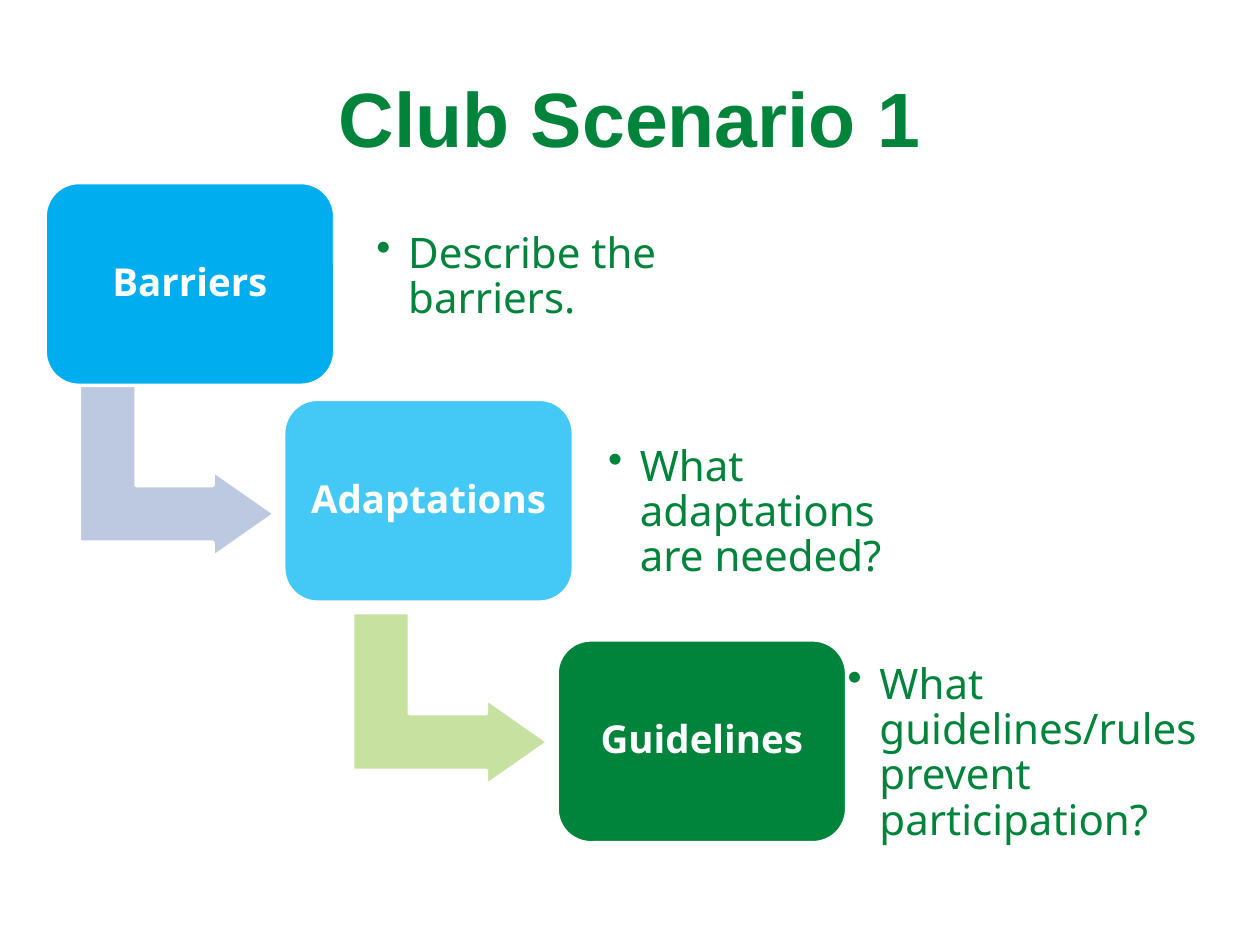
import pptx
import pptx.util
import pptx.dml.color
import pptx.enum.shapes
import pptx.enum.text
import pptx.oxml.ns
import lxml.etree

Cm = pptx.util.Cm
Pt = pptx.util.Pt
KIND = pptx.enum.shapes.MSO_SHAPE
ALIGN = pptx.enum.text.PP_ALIGN
MID = pptx.enum.text.MSO_ANCHOR.MIDDLE

HUES = {
    "white": "FFFFFF",
    "green": "00833B",
    "blue": "00AEEF",
    "sky": "44C8F5",
    "mist": "BDC9E1",
    "lime": "C7E1A1",
}


def tint(name):
    return pptx.dml.color.RGBColor.from_string(HUES[name])


class Deck:
    body = "Noto Sans"
    head = "Arial"

    def __init__(self, wide, high):
        self.show = pptx.Presentation()
        self.show.slide_width = Cm(wide)
        self.show.slide_height = Cm(high)
        self.slide = self.show.slides.add_slide(self.show.slide_layouts[5])

    def words(self, para, text, size, hue, face, bold=False):
        run = para.add_run()
        run.text = text
        run.font.size = Pt(size)
        run.font.name = face
        run.font.bold = bold
        run.font.color.rgb = tint(hue)

    def frame(self, shape, inset):
        frame = shape.text_frame
        frame.word_wrap = True
        frame.vertical_anchor = MID
        frame.margin_left = frame.margin_right = Cm(inset)
        frame.margin_top = frame.margin_bottom = Cm(inset)
        return frame.paragraphs[0]

    def title(self, text, left, top, wide, high):
        shape = self.slide.shapes.title
        shape.left, shape.top = Cm(left), Cm(top)
        shape.width, shape.height = Cm(wide), Cm(high)
        shape.text_frame.vertical_anchor = MID
        para = shape.text_frame.paragraphs[0]
        para.alignment = ALIGN.CENTER
        self.words(para, text, 44, "green", self.head, True)

    def block(self, kind, hue, left, top, wide, high):
        shape = self.slide.shapes.add_shape(
            kind, Cm(left), Cm(top), Cm(wide), Cm(high))
        shape.shadow.inherit = False
        shape.fill.solid()
        shape.fill.fore_color.rgb = tint(hue)
        shape.line.color.rgb = tint("white")
        shape.line.width = Pt(2)
        return shape

    def arrow(self, hue, left, top):
        shape = self.block(KIND.BENT_UP_ARROW, hue, left, top, 3.48, 3.94)
        shape.rotation = 90
        for spot, value in enumerate((0.328, 0.25, 0.358)):
            shape.adjustments[spot] = value

    def step(self, text, hue, left, top):
        shape = self.block(KIND.ROUNDED_RECTANGLE, hue, left, top, 5.84, 4.09)
        shape.adjustments[0] = 0.167
        para = self.frame(shape, 0.23)
        para.alignment = ALIGN.CENTER
        para.line_spacing = 0.9
        self.words(para, text, 22, "white", self.body, True)

    def note(self, text, left, top, wide):
        shape = self.slide.shapes.add_textbox(
            Cm(left), Cm(top), Cm(wide), Cm(3.3))
        para = self.frame(shape, 0.25)
        para.level = 1
        props = para._p.get_or_add_pPr()
        props.set("marL", str(Cm(0.64)))
        props.set("indent", str(-Cm(0.64)))
        mark = lxml.etree.SubElement(props, pptx.oxml.ns.qn("a:buChar"))
        mark.set("char", "•")
        para.alignment = ALIGN.LEFT
        para.line_spacing = 0.9
        self.words(para, text, 24, "green", self.body)


def main():
    deck = Deck(25.4, 19.05)
    deck.title("Club Scenario 1", 1.27, 0.76, 22.86, 3.18)
    steps = [
        (("Barriers", "blue", 0.91, 3.68),
         ("Describe the barriers.", 7.34, 3.94, 7.01),
         ("mist", 1.83, 7.52)),
        (("Adaptations", "sky", 5.72, 8.05),
         ("What adaptations are needed?", 12.01, 8.69, 6.35),
         ("lime", 7.34, 12.12)),
        (("Guidelines", "green", 11.23, 12.9),
         ("What guidelines/rules prevent participation?", 16.84, 13.54, 7.92),
         None),
    ]
    for step, note, arrow in steps:
        if arrow:
            deck.arrow(*arrow)
        deck.step(*step)
        deck.note(*note)
    deck.show.save("out.pptx")


if __name__ == "__main__":
    main()
